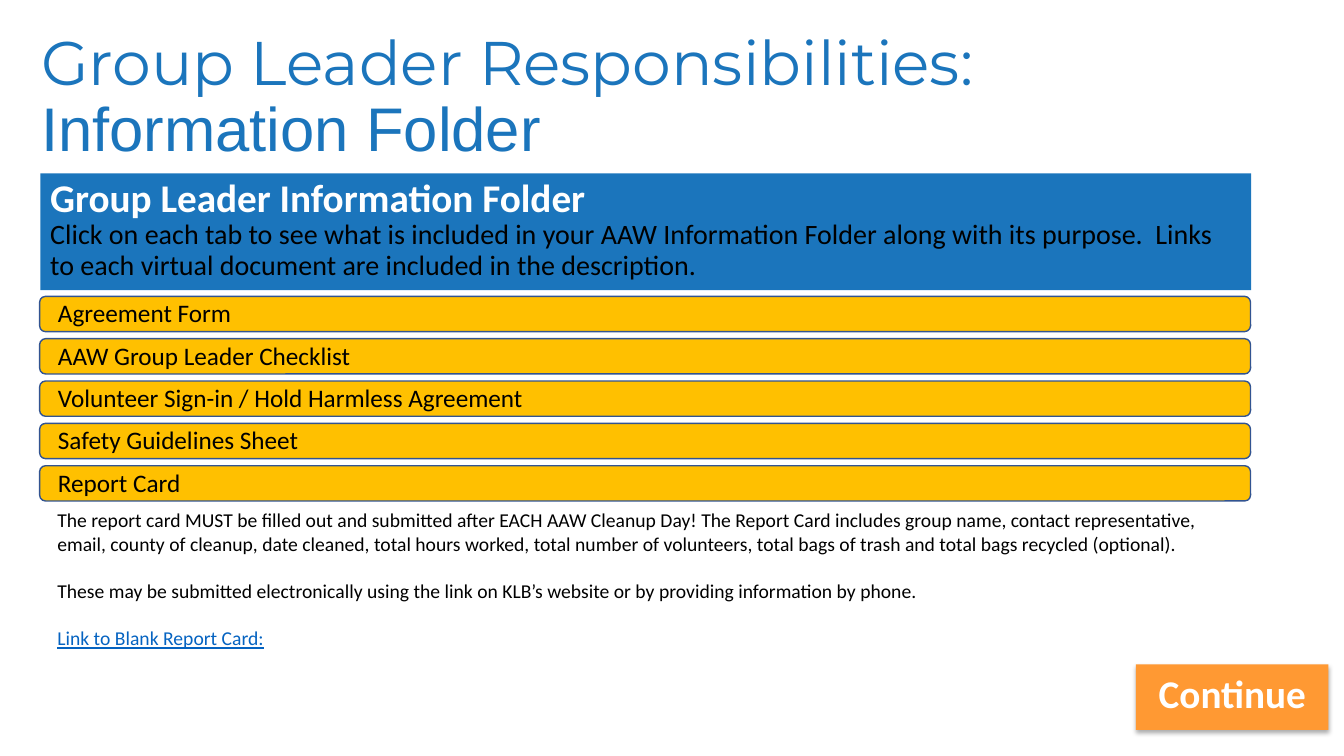
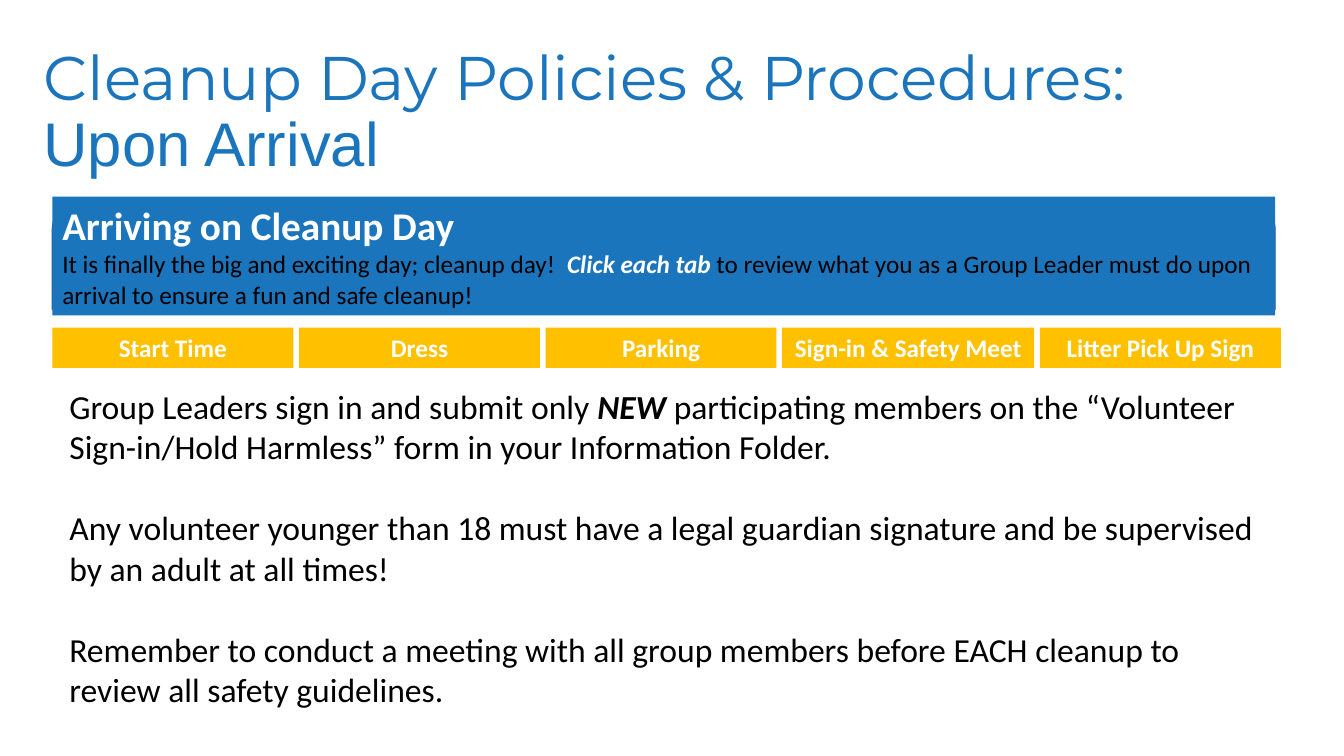
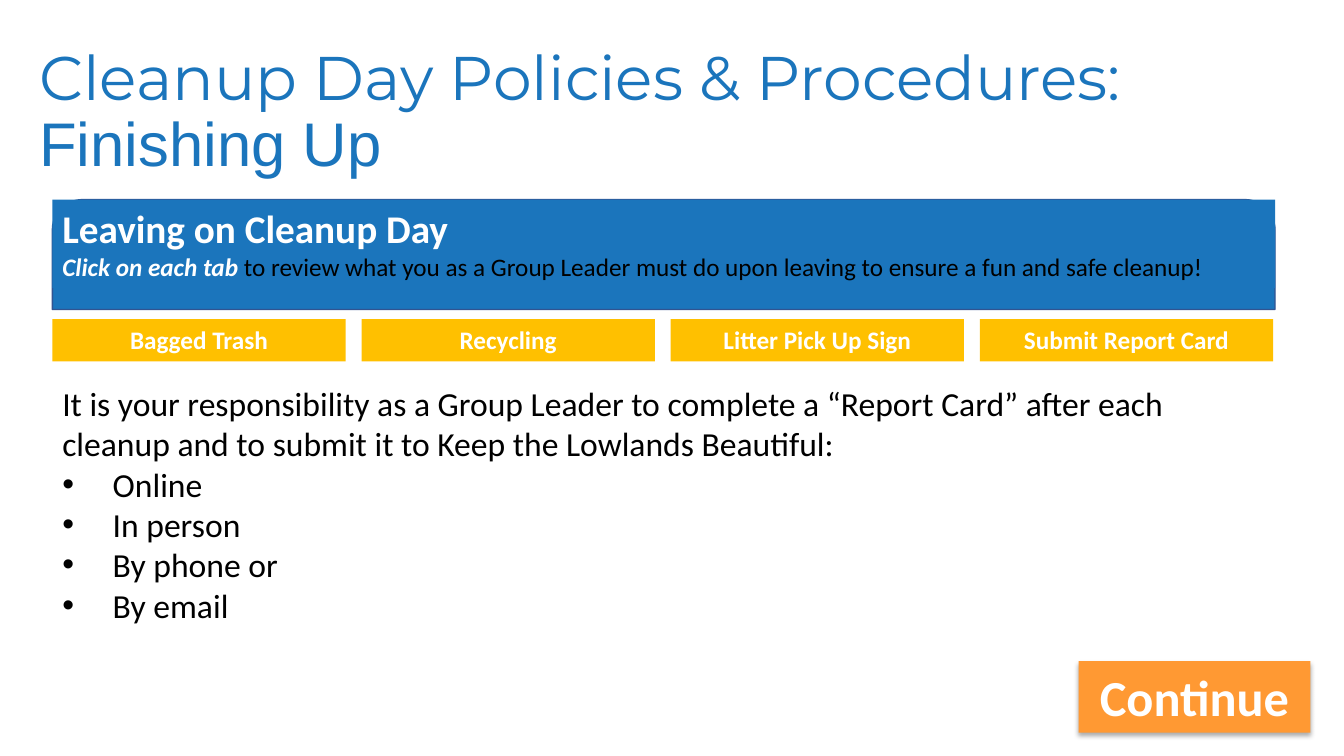
import pptx
import pptx.dml.color
import pptx.enum.shapes
import pptx.enum.text
import pptx.oxml
import pptx.oxml.ns
import pptx.util

SHAPE = pptx.enum.shapes.MSO_SHAPE
ALIGN = pptx.enum.text.PP_ALIGN
ANCHOR = pptx.enum.text.MSO_ANCHOR
Pt = pptx.util.Pt

COLORS = {
    "blue": "1B75BC",
    "teal": "0099CC",
    "amber": "FFC000",
    "orange": "FF9933",
    "outline": "325491",
    "link": "0563C1",
    "white": "FFFFFF",
    "black": "000000",
}
BODY_FONT = "Calibri"

# Grid: boxes are (left, top, width, height) in columns and rows
COLUMNS, ROWS = 40, 30
deck = pptx.Presentation()
deck.slide_width = pptx.util.Inches(13.33)
deck.slide_height = pptx.util.Inches(7.5)


def rgb(name):
    return pptx.dml.color.RGBColor.from_string(COLORS[name])


def place(box):
    column, row = deck.slide_width / COLUMNS, deck.slide_height / ROWS
    return [round(n * unit) for n, unit in zip(box, (column, row) * 2)]


def new_slide():
    return deck.slides.add_slide(deck.slide_layouts[6])


def add_bullet(paragraph):
    props = paragraph._p.get_or_add_pPr()
    indent = pptx.util.Inches(0.5)
    props.set("marL", str(indent))
    props.set("indent", str(-indent))
    ns = pptx.oxml.ns.nsdecls("a")
    for tag in ('a:buFont %s typeface="Arial"', 'a:buChar %s char="•"'):
        props.append(pptx.oxml.parse_xml("<" + tag % ns + "/>"))


def write(shape, paragraphs, size, color="black", font=BODY_FONT, bold=False,
          align=ALIGN.LEFT, anchor=ANCHOR.TOP, spacing=None, gap=0):
    """Each paragraph is a list of (text, style) runs; style overrides the defaults."""
    frame = shape.text_frame
    frame.word_wrap = True
    frame.vertical_anchor = anchor
    for index, runs in enumerate(paragraphs):
        paragraph = frame.paragraphs[0] if index == 0 else frame.add_paragraph()
        paragraph.alignment = align
        if spacing:
            paragraph.line_spacing = spacing
        if index and gap:
            paragraph.space_before = Pt(gap)
        for text, style in runs:
            run = paragraph.add_run()
            run.text = text
            run.font.name = style.get("font", font)
            run.font.size = Pt(style.get("size", size))
            run.font.bold = style.get("bold", bold)
            run.font.italic = style.get("italic", False)
            run.font.underline = style.get("underline", False)
            run.font.color.rgb = rgb(style.get("color", color))


def text_box(slide, box, paragraphs, size, **style):
    area = slide.shapes.add_textbox(*place(box))
    write(area, paragraphs, size, **style)
    return area


def panel(slide, box, fill, kind=SHAPE.RECTANGLE, outlined=False):
    shape = slide.shapes.add_shape(kind, *place(box))
    shape.shadow.inherit = False
    shape.fill.solid()
    shape.fill.fore_color.rgb = rgb(fill)
    if outlined:
        shape.line.color.rgb = rgb("outline")
        shape.line.width = Pt(1)
    else:
        shape.line.fill.background()
    return shape


# Shared regions
def title(slide, box, topic, subject):
    text_box(slide, box, [[(topic + " ", {}), (subject, {"font": "Arial"})]], 44,
             color="blue", font="Montserrat", anchor=ANCHOR.MIDDLE, spacing=0.9)


def band(slide, box, heading, intro, size, spacing=None):
    heading_run = (heading, {"size": 28, "color": "white", "bold": True})
    write(panel(slide, box, "blue"), [[heading_run], intro], size, spacing=spacing)


def band_backing(slide, fill):
    backing = panel(slide, (1.56, 7.92, 36.39, 4.36), fill,
                    SHAPE.ROUND_2_SAME_RECTANGLE, outlined=True)
    backing.adjustments[0] = 0.275
    backing.adjustments[1] = 0


def tab_row(slide, left, top, height, gap, tabs):
    for label, width in tabs:
        tab = panel(slide, (left, top, width, height), "amber")
        write(tab, [[(label, {})]], 18, color="white", bold=True, align=ALIGN.CENTER)
        left += width + gap


def accordion(slide, box, pitch, labels):
    left, top, width, height = box
    for index, label in enumerate(labels):
        bar_top = top + index * pitch
        panel(slide, (left, bar_top, width, height), "amber",
              SHAPE.ROUNDED_RECTANGLE, outlined=True)
        text_box(slide, (left + 0.25, bar_top - 0.15, width / 2, 1.6),
                 [[(label, {})]], 18)


def continue_button(slide, box, size):
    button = panel(slide, box, "orange")
    write(button, [[("Continue", {})]], size, color="white", bold=True,
          align=ALIGN.CENTER)
    effects = button._element.spPr.find(pptx.oxml.ns.qn("a:effectLst"))
    effects.append(pptx.oxml.parse_xml(
        '<a:outerShdw %s blurRad="%d" dist="%d" dir="5400000" rotWithShape="0">'
        '<a:srgbClr val="%s"><a:alpha val="32000"/></a:srgbClr></a:outerShdw>'
        % (pptx.oxml.ns.nsdecls("a"), Pt(3.5), Pt(2.2), COLORS["black"])))


CLICK = {"color": "white", "bold": True, "italic": True}


# Slide types
def folder_slide():
    slide = new_slide()
    text_box(slide, (1.41, 19.96, 35.79, 6.04), [
        [("The report card MUST be filled out and submitted after EACH AAW Cleanup Day! "
          "The Report Card includes group name, contact representative, email, county of "
          "cleanup, date cleaned, total hours worked, total number of volunteers, total "
          "bags of trash and total bags recycled (optional).", {})],
        [("These may be submitted electronically using the link on KLB’s website or by "
          "providing information by phone.", {})],
        [("Link to Blank Report Card:", {"color": "link", "underline": True})],
    ], 14, gap=17)
    title(slide, (0.93, 1, 36.31, 5.8), "Group Leader Responsibilities:",
          "Information Folder")
    band(slide, (1.2, 6.88, 36.04, 4.64), "Group Leader Information Folder",
         [("Click on each tab to see what is included in your AAW Information Folder "
           "along with its purpose.  Links to each virtual document are included in "
           "the description.", {})], 20, spacing=0.9)
    accordion(slide, (1.18, 11.76, 36.04, 1.4), 1.68, [
        "Agreement Form",
        "AAW Group Leader Checklist",
        "Volunteer Sign-in / Hold Harmless Agreement",
        "Safety Guidelines Sheet",
        "Report Card",
    ])
    continue_button(slide, (33.81, 26.36, 5.73, 2.6), 28)


def arrival_slide():
    slide = new_slide()
    title(slide, (1, 1.6, 37.45, 5.8), "Cleanup Day Policies & Procedures:",
          "Upon Arrival")
    band_backing(slide, "teal")
    band(slide, (1.56, 7.8, 36.39, 4.72), "Arriving on Cleanup Day", [
        ("It is finally the big and exciting day; cleanup day!  ", {}),
        ("Click each tab", CLICK),
        (" to review what you as a Group Leader must do upon arrival to ensure a fun "
         "and safe cleanup!", {}),
    ], 18)
    tab_row(slide, 1.56, 13, 1.6, 0.17, [
        ("Start Time", 7.17),
        ("Dress", 7.17),
        ("Parking", 6.87),
        ("Sign-in & Safety Meet", 7.5),
        ("Litter Pick Up Sign", 7.17),
    ])
    text_box(slide, (1.77, 15.12, 35.82, 13.32), [
        [("Group Leaders sign in and submit only ", {}),
         ("NEW", {"bold": True, "italic": True}),
         (" participating members on the “Volunteer Sign-in/Hold Harmless” form in "
          "your Information Folder.", {})],
        [("Any volunteer younger than 18 must have a legal guardian signature and be "
          "supervised by an adult at all times!", {})],
        [("Remember to conduct a meeting with all group members before EACH cleanup to "
          "review all safety guidelines.", {})],
    ], 24, gap=29)


def finishing_slide():
    slide = new_slide()
    title(slide, (0.87, 1.6, 38.05, 5.8), "Cleanup Day Policies & Procedures:",
          "Finishing Up")
    band_backing(slide, "blue")
    band(slide, (1.56, 7.92, 36.39, 3.52), "Leaving on Cleanup Day", [
        ("Click on each tab ", CLICK),
        ("to review what you as a Group Leader must do upon leaving to ensure a fun "
         "and safe cleanup!", {}),
    ], 18)
    tabs = ["Bagged Trash", "Recycling", "Litter Pick Up Sign", "Submit Report Card"]
    tab_row(slide, 1.56, 12.66, 1.68, 0.47, [(label, 8.73) for label in tabs])
    continue_button(slide, (32.1, 26.24, 6.9, 2.84), 36)
    ways = ["Online", "In person", "By phone or", "By email"]
    duty = text_box(slide, (1.56, 15, 36.39, 10.08), [
        [("It is your responsibility as a Group Leader to complete a “Report Card” "
          "after each cleanup and to submit it to Keep the Lowlands Beautiful:", {})],
    ] + [[(way, {})] for way in ways], 24)
    for paragraph in duty.text_frame.paragraphs[1:]:
        add_bullet(paragraph)


def main():
    folder_slide()
    arrival_slide()
    finishing_slide()
    deck.save("out.pptx")


if __name__ == "__main__":
    main()
